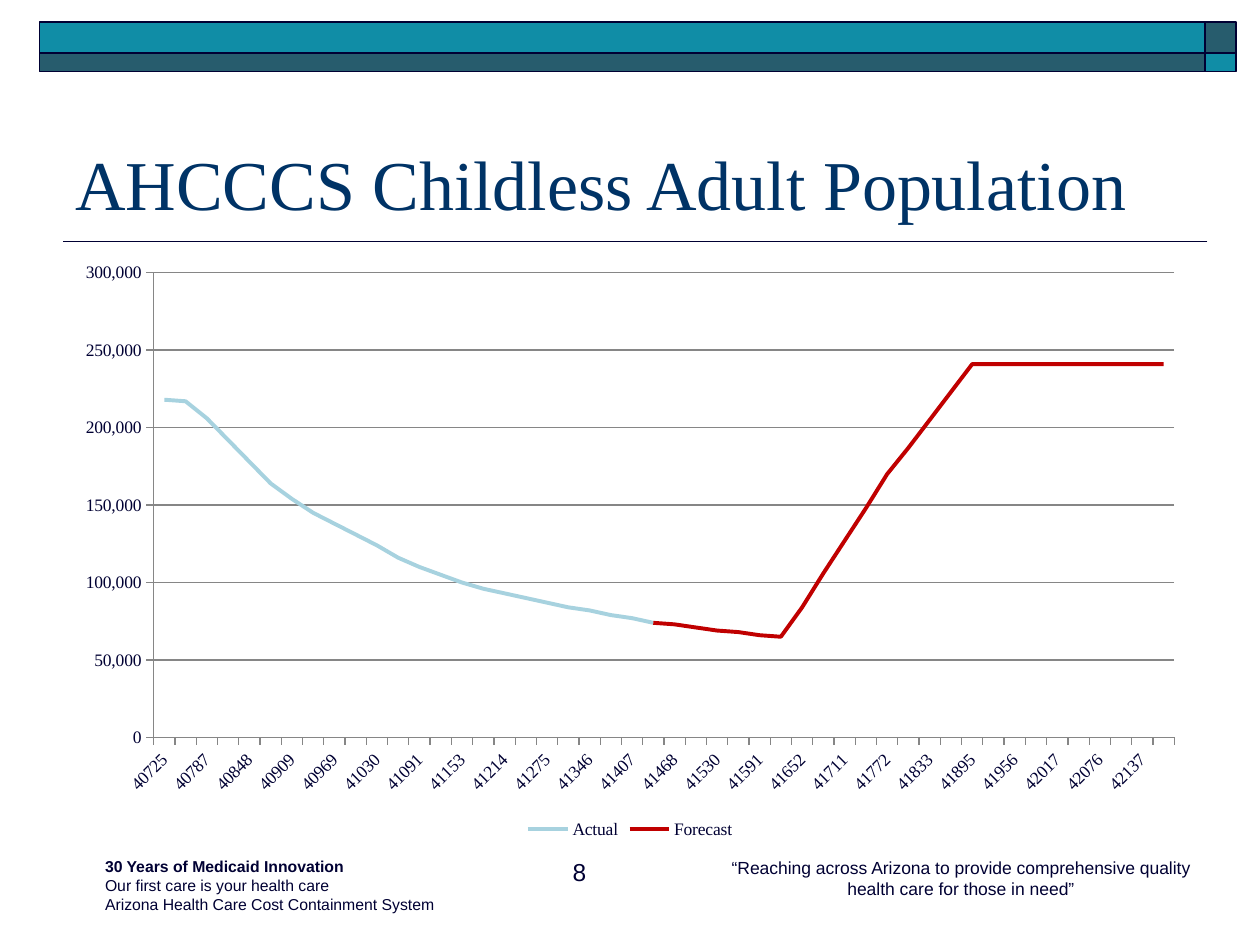
"""Build the childless adult population slide with its line chart."""
import pptx
import pptx.chart.data
import pptx.dml.color
import pptx.enum.chart
import pptx.enum.shapes
import pptx.enum.text
import pptx.oxml
import pptx.oxml.ns
import pptx.util

Pt = pptx.util.Pt
ALIGN = pptx.enum.text.PP_ALIGN
ANCHOR = pptx.enum.text.MSO_ANCHOR
SERIF, SANS = "Times New Roman", "Arial"
HUES = {
    "ink": "000033", "title": "003366", "teal": "108DA6", "slate": "275C6D",
    "grid": "868686", "Actual": "A7D2DF", "Forecast": "C00000",
}
TITLE = "AHCCCS Childless Adult Population"
MOTTO = "“Reaching across Arizona to provide comprehensive quality health care for those in need”"
FOOTER = [
    "30 Years of Medicaid Innovation",
    "Our first care is your health care",
    "Arizona Health Care Cost Containment System",
]
DATES = """
40725 40756 40787 40817 40848 40878 40909 40940 40969 41000 41030 41061
41091 41122 41153 41194 41214 41244 41275 41318 41346 41377 41407 41438
41468 41499 41530 41560 41591 41621 41652 41683 41711 41742 41772 41803
41833 41864 41895 41925 41956 41986 42017 42048 42076 42107 42137 42168
""".split()
ACTUAL = [218, 217, 206, 192, 178, 164, 154, 145, 138, 131, 124, 116,
          110, 105, 100, 96, 93, 90, 87, 84, 82, 79, 77, 74]
FORECAST = [74, 73, 71, 69, 68, 66, 65, 84, 106, 127, 148, 170, 187, 205, 223] + [241] * 10
COLS = [(22.5, 666), (688.5, 18)]
ROWS = [(12.5, 18), (30.5, 10.5)]
PLOT = {"x": 0.08, "y": 0.035, "w": 0.9, "h": 0.785}


def hue(name):
    return pptx.dml.color.RGBColor.from_string(HUES[name])


def style(font, size, face, name="ink"):
    font.size, font.name = Pt(size), face
    font.color.rgb = hue(name)


def stroke(line, name, width):
    line.color.rgb = hue(name)
    line.width = Pt(width)


def add_bars(slide):
    for r, (top, high) in enumerate(ROWS):
        for c, (left, wide) in enumerate(COLS):
            bar = slide.shapes.add_shape(
                pptx.enum.shapes.MSO_SHAPE.RECTANGLE, Pt(left), Pt(top), Pt(wide), Pt(high))
            bar.shadow.inherit = False
            bar.fill.solid()
            bar.fill.fore_color.rgb = hue("teal" if r == c else "slate")
            stroke(bar.line, "ink", 1)


def add_rule(slide):
    rule = slide.shapes.add_connector(
        pptx.enum.shapes.MSO_CONNECTOR.STRAIGHT, Pt(690), Pt(138), Pt(36), Pt(138))
    stroke(rule.line, "ink", 1)
    props = rule._element.spPr
    props.append(props.makeelement(pptx.oxml.ns.qn("a:effectLst"), {}))


def add_text(slide, area, lines, size, face=SANS, name="ink", align=ALIGN.LEFT, anchor=ANCHOR.TOP):
    frame = slide.shapes.add_textbox(*map(Pt, area)).text_frame
    frame.word_wrap = True
    frame.vertical_anchor = anchor
    frame.text = "\n".join(lines)
    for para in frame.paragraphs:
        para.alignment = align
        for run in para.runs:
            style(run.font, size, face, name)
    return frame


def set_plot(chart):
    area = chart._chartSpace.chart.plotArea
    for old in area.findall(pptx.oxml.ns.qn("c:layout")):
        area.remove(old)
    parts = '<c:layoutTarget val="inner"/><c:xMode val="edge"/><c:yMode val="edge"/>'
    parts += "".join(f'<c:{key} val="{val}"/>' for key, val in PLOT.items())
    space = pptx.oxml.ns.nsdecls("c")
    area.insert(0, pptx.oxml.parse_xml(
        f"<c:layout {space}><c:manualLayout>{parts}</c:manualLayout></c:layout>"))


def set_axes(chart):
    dates, count = chart.category_axis, chart.value_axis
    count.minimum_scale, count.maximum_scale, count.major_unit = 0, 300000, 50000
    count.has_major_gridlines = True
    stroke(count.major_gridlines.format.line, "grid", 0.75)
    count.tick_labels.number_format = "#,##0"
    count.tick_labels.number_format_is_linked = False
    for axis in (dates, count):
        axis.major_tick_mark = pptx.enum.chart.XL_TICK_MARK.OUTSIDE
        axis.minor_tick_mark = pptx.enum.chart.XL_TICK_MARK.NONE
        stroke(axis.format.line, "grid", 0.75)
        style(axis.tick_labels.font, 10, SERIF)
    root = dates._element
    root.find(".//" + pptx.oxml.ns.qn("a:bodyPr")).set("rot", "-2700000")
    skip = root.makeelement(pptx.oxml.ns.qn("c:tickLblSkip"), {"val": "2"})
    root.find(pptx.oxml.ns.qn("c:noMultiLvlLbl")).addprevious(skip)


def add_chart(slide):
    data = pptx.chart.data.CategoryChartData(number_format="#,##0")
    data.categories = DATES
    lead = [None] * (len(DATES) - len(FORECAST))
    tail = [None] * (len(DATES) - len(ACTUAL))
    data.add_series("Actual", [n * 1000 for n in ACTUAL] + tail)
    data.add_series("Forecast", lead + [n * 1000 for n in FORECAST])
    chart = slide.shapes.add_chart(
        pptx.enum.chart.XL_CHART_TYPE.LINE, Pt(36), Pt(144), Pt(648), Pt(338.4), data).chart
    style(chart.font, 10, SERIF)
    chart.has_title = False
    chart.has_legend = True
    chart.legend.position = pptx.enum.chart.XL_LEGEND_POSITION.BOTTOM
    chart.legend.include_in_layout = False
    style(chart.legend.font, 10, SERIF)
    for line in chart.plots[0].series:
        line.smooth = False
        line.marker.style = pptx.enum.chart.XL_MARKER_STYLE.NONE
        stroke(line.format.line, line.name, 2.25)
    set_axes(chart)
    set_plot(chart)


def main():
    deck = pptx.Presentation()
    deck.slide_width, deck.slide_height = Pt(720), Pt(540)
    slide = deck.slides.add_slide(deck.slide_layouts[6])
    add_rule(slide)
    add_bars(slide)
    add_text(slide, (402, 486, 294, 31), [MOTTO], 10, align=ALIGN.CENTER)
    add_text(slide, (36, 42, 648, 90), [TITLE], 40, SERIF, "title", anchor=ANCHOR.BOTTOM)
    foot = add_text(slide, (18, 486, 672, 37.5), FOOTER, 9)
    foot.margin_left = Pt(42)
    foot.paragraphs[0].runs[0].font.bold = True
    add_text(slide, (174, 486, 168, 37.5), ["8"], 14, align=ALIGN.RIGHT)
    add_chart(slide)
    deck.save("out.pptx")


if __name__ == "__main__":
    main()
